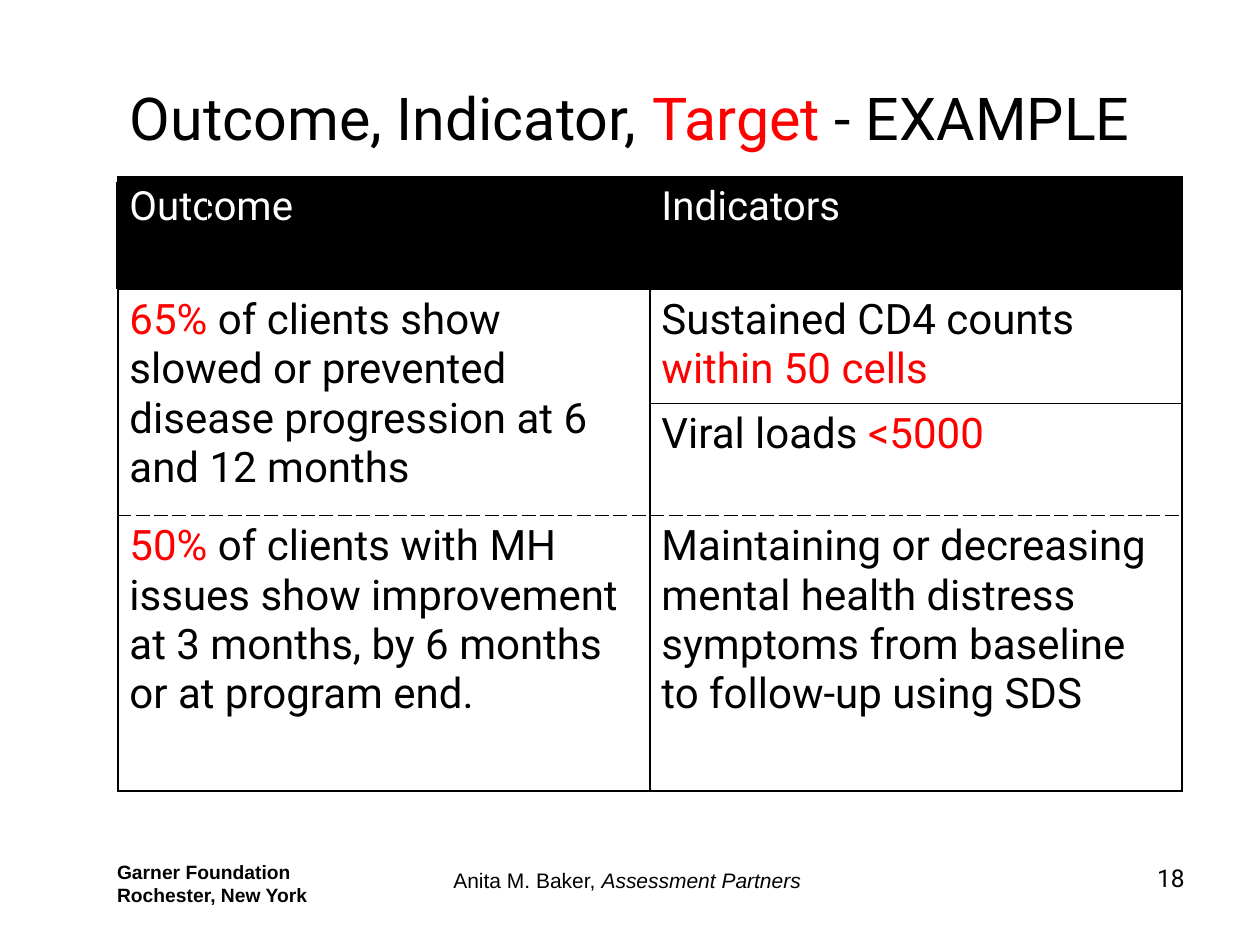
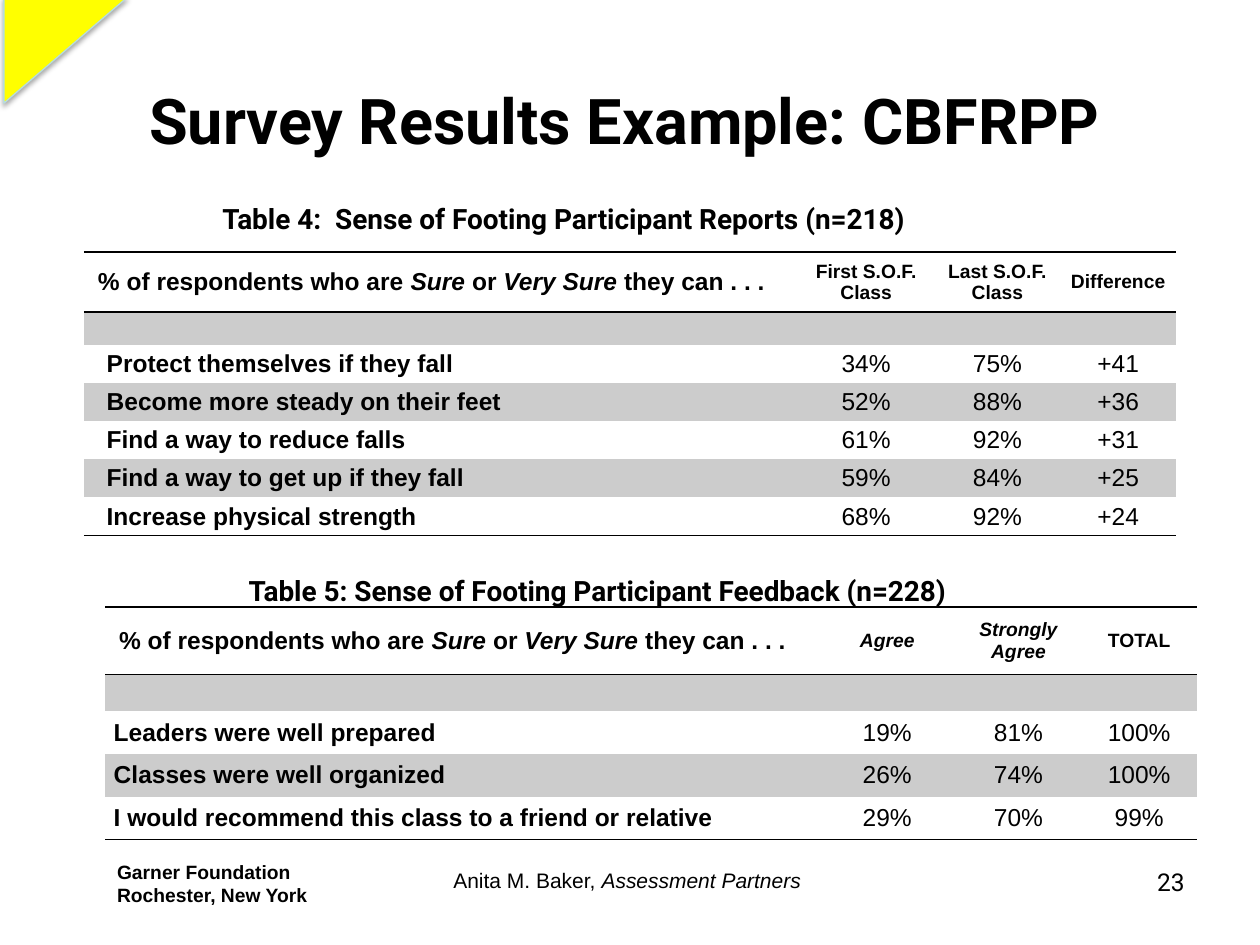
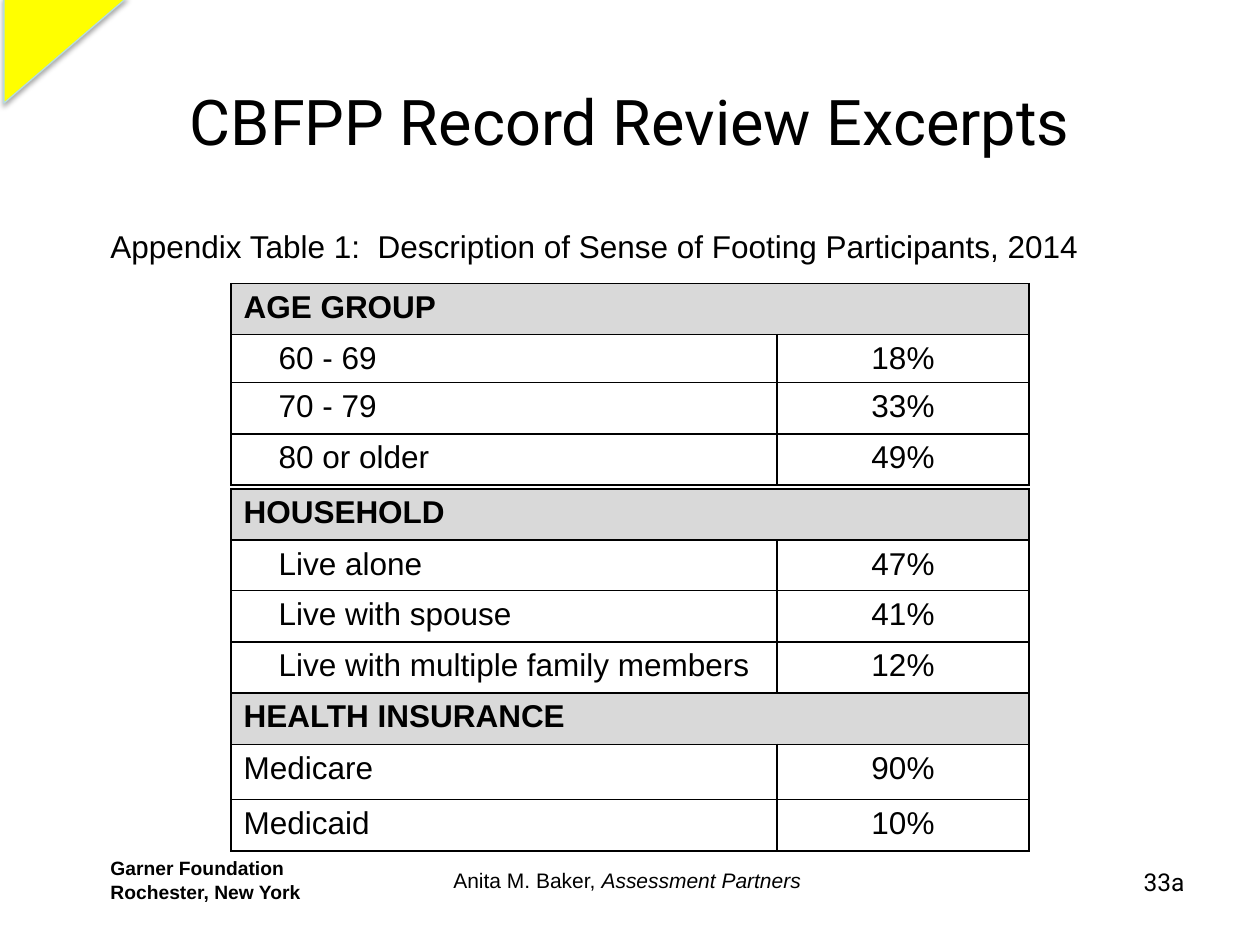
"""Builds three evaluation slides with tables, shared titles and footers."""
import pptx
import pptx.dml.color
import pptx.enum.shapes
import pptx.enum.text
import pptx.oxml.ns
import pptx.util
from lxml import etree

Pt = pptx.util.Pt
qn = pptx.oxml.ns.qn
ALIGN = pptx.enum.text.PP_ALIGN
ANCHOR = pptx.enum.text.MSO_ANCHOR
SHAPE = pptx.enum.shapes.MSO_SHAPE

BLACK, WHITE, RED = "000000", "FFFFFF", "FF0000"
BAND, HEADING, YELLOW, PALE = "CCCCCC", "D9D9D9", "FFFF00", "B6DCDF"
HOT, ITALIC = {"color": RED}, {"italic": True}
TITLE = {"name": "Roboto", "size": 36, "color": BLACK}
CAPTION = {"name": "Roboto", "size": 16, "bold": True, "color": BLACK}
PLAIN = {"name": "Arial", "size": 18, "color": BLACK}
OWNER = {"name": "Arial", "size": 11, "bold": True, "color": BLACK}
AUTHOR = {"name": "Arial", "size": 12, "color": BLACK}
NUMBER = {"name": "Roboto", "size": 14, "color": BLACK}

TARGETS = [
    ["Outcome", "Indicators"],
    [[("65%", HOT), " of clients show slowed or prevented disease progression at 6 and 12 months"],
     ["Sustained CD4 counts ", ("within 50 cells", HOT)]],
    ["", ["Viral loads ", ("<5000", HOT)]],
    [[("50% ", HOT), "of clients with MH issues show improvement at 3 months, by 6 months or at program end."],
     "Maintaining or decreasing mental health distress symptoms from baseline to follow-up using SDS"],
]
QUESTION = ["% of respondents who are ", ("Sure ", ITALIC), "or", (" Very Sure ", ITALIC), "they can . . ."]
REPORTS = [
    [QUESTION, "First S.O.F. Class", "Last S.O.F. Class", "Difference"],
    [""] * 4,
    ["Protect themselves if they fall", "34%", "75%", "+41"],
    ["Become more steady on their feet", "52%", "88%", "+36"],
    ["Find a way to reduce falls", "61%", "92%", "+31"],
    ["Find a way to get up if they fall", "59%", "84%", "+25"],
    ["Increase physical strength", "68%", "92%", "+24"],
]
FEEDBACK = [
    [QUESTION, [("Agree", ITALIC)], [("Strongly Agree", ITALIC)], "TOTAL"],
    [""] * 4,
    ["Leaders were well prepared", "19%", "81%", "100%"],
    ["Classes were well organized", "26%", "74%", "100%"],
    ["I would recommend this class to a friend or relative", "29%", "70%", "99%"],
]
AGES = [["AGE GROUP", ""], ["60 - 69", "18%"], ["70 - 79", "33%"], ["80 or older", "49%"]]
HOUSEHOLDS = [
    ["HOUSEHOLD", ""], ["Live alone", "47%"], ["Live with spouse", "41%"],
    ["Live with multiple family members", "12%"],
    ["HEALTH INSURANCE", ""], ["Medicare", "90%"], ["Medicaid", "10%"],
]
UNINDENTED = ("Medicare", "Medicaid")


def rgb(value):
    return pptx.dml.color.RGBColor.from_string(value)


def write(tf, paragraphs, base, align=ALIGN.LEFT):
    for i, runs in enumerate(paragraphs):
        p = tf.add_paragraph() if i else tf.paragraphs[0]
        p.alignment = align
        for run in [runs] if isinstance(runs, str) else runs:
            text, extra = (run, {}) if isinstance(run, str) else run
            r = p.add_run()
            r.text = text
            for key, value in {**base, **extra}.items():
                if key == "color":
                    r.font.color.rgb = rgb(value)
                else:
                    setattr(r.font, key, Pt(value) if key == "size" else value)


def add_text(s, box, paragraphs, base, align=ALIGN.LEFT, anchor=ANCHOR.TOP):
    sp = s.shapes.add_textbox(*map(Pt, box))
    sp.text_frame.word_wrap = True
    sp.text_frame.vertical_anchor = anchor
    write(sp.text_frame, paragraphs, base, align)


def set_border(cell, edges):
    tcPr = cell._tc.get_or_add_tcPr()
    for i, side in enumerate("LRTB"):
        ln = etree.Element(qn("a:ln" + side), w=str(Pt(1)))
        tcPr.insert(i, ln)
        dash = edges.get(side)
        if dash:
            fill = etree.SubElement(ln, qn("a:solidFill"))
            etree.SubElement(fill, qn("a:srgbClr"), val=BLACK)
            etree.SubElement(ln, qn("a:prstDash"), val=dash)
        else:
            etree.SubElement(ln, qn("a:noFill"))


def add_grid(s, left, top, widths, heights, rows, look, merges=()):
    frame = s.shapes.add_table(len(rows), len(widths), Pt(left), Pt(top),
                               Pt(sum(widths)), Pt(sum(heights)))
    table = frame.table
    table.first_row = table.horz_banding = False
    for parts, key, sizes in ((table.columns, "width", widths), (table.rows, "height", heights)):
        for part, size in zip(parts, sizes):
            setattr(part, key, Pt(size))
    for r, row in enumerate(rows):
        for c, content in enumerate(row):
            cell, style = table.cell(r, c), look(r, c)
            for key, value in style["cell"].items():
                setattr(cell, key, value)
            if style["fill"]:
                cell.fill.solid()
                cell.fill.fore_color.rgb = rgb(style["fill"])
            else:
                cell.fill.background()
            set_border(cell, style["edges"])
            if content:
                write(cell.text_frame, [content], style["font"], style["align"])
            else:
                p = cell.text_frame.paragraphs[0]._p
                etree.SubElement(p, qn("a:endParaRPr"), sz="1100")
    for first, last in merges:
        table.cell(*first).merge(table.cell(*last))


def boxed():
    return dict.fromkeys("LRTB", "solid")


def target_look(r, c):
    edges = boxed()
    if r == 2 or (r, c) == (1, 0):
        edges["B"] = "lgDash"
    if r == 3:
        edges["T"] = "lgDash"
    head = r == 0
    return {"font": {"name": "Roboto", "size": 23 if head else 24, "color": WHITE if head else BLACK},
            "align": ALIGN.LEFT, "fill": BLACK if head else WHITE, "edges": edges,
            "cell": {"margin_left": Pt(6.5), "margin_right": Pt(6.5)}}


def marker_look(r, c):
    return {"fill": None, "edges": boxed(), "cell": {}}


def survey_look(rows, indent):
    def look(r, c):
        head = r == 0
        edges = {"T": "solid", "B": "solid"} if head else {}
        if r == 1:
            edges["T"] = "solid"
        if r == len(rows) - 1:
            edges["B"] = "solid"
        font = {"name": "Arial", "size": 11 if head and c else 14, "bold": head or c == 0, "color": BLACK}
        margin = 5 + (0 if c else 3 if head else indent)
        return {"font": font, "align": ALIGN.CENTER if c else ALIGN.LEFT,
                "fill": BAND if r % 2 else None, "edges": edges,
                "cell": {"margin_left": Pt(margin), "margin_right": Pt(5), "margin_top": 0,
                         "margin_bottom": 0, "vertical_anchor": ANCHOR.MIDDLE}}
    return look


def record_look(rows):
    def look(r, c):
        head = not rows[r][1]
        indent = 0 if c or head or rows[r][0] in UNINDENTED else 20
        return {"font": {**PLAIN, "bold": head}, "align": ALIGN.CENTER if c else ALIGN.LEFT,
                "fill": HEADING if head else WHITE, "edges": boxed(),
                "cell": {"margin_left": Pt(7.2 + indent), "margin_bottom": Pt(1.5)}}
    return look


def add_corner(s):
    sp = s.shapes.add_shape(SHAPE.RIGHT_TRIANGLE, Pt(7.2), Pt(-6.5), Pt(60.5), Pt(70.5))
    sp.rotation = 90
    sp.fill.solid()
    sp.fill.fore_color.rgb = rgb(YELLOW)
    sp.line.color.rgb = rgb(PALE)
    sp.line.width = Pt(0.75)
    sp.shadow.inherit = False
    effects = sp._element.spPr.find(qn("a:effectLst"))
    shadow = etree.SubElement(effects, qn("a:outerShdw"), blurRad=str(Pt(3.1)), dist=str(Pt(1.8)),
                              dir="5400000", rotWithShape="0")
    color = etree.SubElement(shadow, qn("a:srgbClr"), val=BLACK)
    etree.SubElement(color, qn("a:alpha"), val="35000")


def add_slide(prs, title, box, number, font={}, number_top=491.8, owner=(59.8, 488.2)):
    s = prs.slides.add_slide(prs.slide_layouts[6])
    add_text(s, box, [title], {**TITLE, **font}, ALIGN.CENTER, ANCHOR.MIDDLE)
    add_text(s, (*owner, 150, 34), ["Garner Foundation", "Rochester, New York"], OWNER)
    add_text(s, (252, 492.5, 216, 41), [["Anita M. Baker, ", ("Assessment Partners", ITALIC)]], AUTHOR)
    add_text(s, (516, number_top, 168, 37.5), [number], NUMBER, ALIGN.RIGHT)
    return s


def main():
    prs = pptx.Presentation()
    prs.slide_width, prs.slide_height = Pt(720), Pt(540)

    s = add_slide(prs, ["Outcome, Indicator, ", ("Target", HOT), " - EXAMPLE"],
                  (36, 21.6, 648, 90), "18", {"size": 33.8}, number_top=489.6)
    add_grid(s, 67.5, 101.2, [304, 304], [64, 65.4, 64, 157.5], TARGETS, target_look, [((1, 0), (2, 0))])
    add_grid(s, 66.5, 104.2, [52], [60.5], [[""]], marker_look)

    s = add_slide(prs, "Survey Results Example: CBFRPP", (72, 39.6, 570, 57), "23", {"bold": True})
    survey_widths = [408, 78, 72, 66]
    for caption, box, left, top, heights, rows, indent in (
        ("Table 4:  Sense of Footing Participant Reports (n=218)", (120, 111.6, 441, 26.6),
         48, 144, [34.4, 18.7] + [21.8] * 5, REPORTS, 8),
        ("Table 5: Sense of Footing Participant Feedback (n=228)", (135, 324, 471, 26.6),
         60, 346.8, [38.7, 20.9] + [24.5] * 3, FEEDBACK, 0),
    ):
        add_text(s, box, [caption], CAPTION, anchor=ANCHOR.MIDDLE)
        add_grid(s, left, top, survey_widths, heights, rows, survey_look(rows, indent))
    add_corner(s)

    s = add_slide(prs, "CBFPP Record Review Excerpts", (36, 23.8, 648, 90), "33a", owner=(56, 486))
    add_text(s, (56, 126, 592, 29), ["Appendix Table 1:  Description of Sense of Footing Participants, 2014"], PLAIN)
    for top, heights, rows in (
        (162, [29.3, 27.4, 29.3, 29.3], AGES),
        (279.4, [29.3, 28.8, 29.3, 29.3, 29.3, 31.6, 29.3], HOUSEHOLDS),
    ):
        merges = [((r, 0), (r, 1)) for r, row in enumerate(rows) if not row[1]]
        add_grid(s, 132, top, [312, 144], heights, rows, record_look(rows), merges)
    add_corner(s)

    prs.save("out.pptx")


if __name__ == "__main__":
    main()
